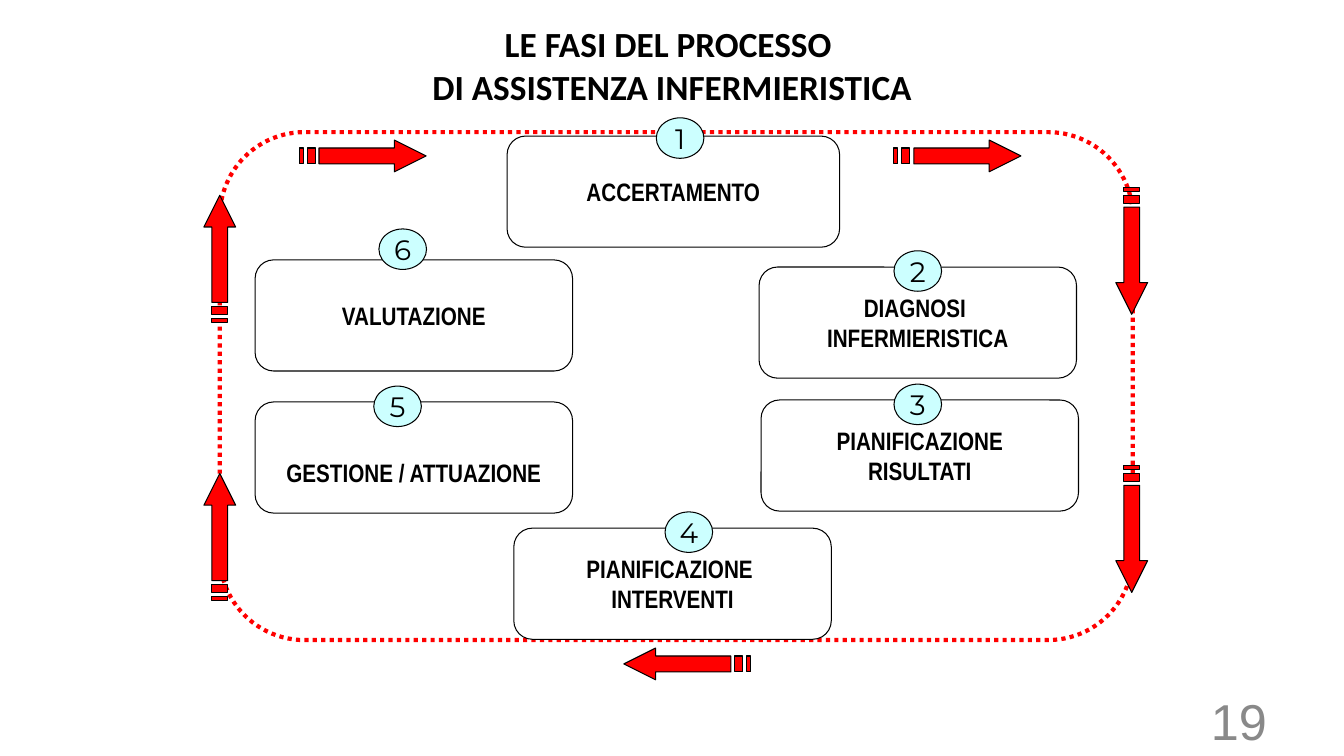
"""Build the slide on the six phases of the nursing care process."""
from pptx import Presentation
from pptx.dml.color import RGBColor
from pptx.enum.dml import MSO_LINE_DASH_STYLE as Dash
from pptx.enum.shapes import MSO_SHAPE as Preset
from pptx.enum.text import MSO_VERTICAL_ANCHOR as Anchor, PP_PARAGRAPH_ALIGNMENT as Align
from pptx.util import Cm, Pt


def paint(shape, fill, line, width):
    shape.shadow.inherit = False
    if fill:
        shape.fill.solid()
        shape.fill.fore_color.rgb = RGBColor.from_string(fill)
    else:
        shape.fill.background()
    shape.line.color.rgb = RGBColor.from_string(line)
    shape.line.width = Pt(width)


def write(para, text, font, size, color="000000", bold=False, align=Align.CENTER):
    para.alignment = align
    span = para.add_run()
    span.text = text
    span.font.name = font
    span.font.size = Pt(size)
    span.font.bold = bold
    span.font.color.rgb = RGBColor.from_string(color)


deck = Presentation()
deck.slide_width, deck.slide_height = Cm(33.87), Cm(19.05)
page = deck.slides.add_slide(deck.slide_layouts[5])
shapes = page.shapes

title = shapes.title
title.left, title.top, title.width, title.height = Cm(5.51), Cm(0.76), Cm(22.86), Cm(1.75)
title.text_frame.vertical_anchor = Anchor.MIDDLE
heading = title.text_frame.paragraphs[0]
write(heading, "LE FASI DEL PROCESSO ", "Calibri", 25.2, bold=True)
heading.add_line_break()
write(heading, "DI ASSISTENZA INFERMIERISTICA", "Calibri", 25.2, bold=True)

number_box = shapes.add_textbox(Cm(24.28), Cm(17.65), Cm(7.9), Cm(1.02))
number_box.text_frame.word_wrap = True
number_box.text_frame.vertical_anchor = Anchor.MIDDLE
write(number_box.text_frame.paragraphs[0], "19", "Arial", 36, "898989", align=Align.RIGHT)

cycle = shapes.add_shape(Preset.ROUNDED_RECTANGLE, Cm(5.54), Cm(3.33), Cm(23.01), Cm(12.8))
paint(cycle, None, "FF0000", 3)
cycle.line.dash_style = Dash.ROUND_DOT

ARROWS = [
    (22.53, 3.53, 0), (26.92, 5.92, 90), (26.92, 12.93, 90), (15.72, 16.33, 180),
    (3.94, 6.12, 270), (3.94, 13.13, 270), (7.54, 3.53, 0),
]
HEAD = [(24, 2), (5, 2), (5, 6), (24, 6), (24, 8), (32, 4)]
STRIPES = [(2, 4), (0, 1)]
for left, top, angle in ARROWS:
    outline = shapes.build_freeform(24, 0, scale=Cm(0.1))
    outline.add_line_segments(HEAD)
    for start, end in STRIPES:
        outline.move_to(start, 2)
        outline.add_line_segments([(start, 6), (end, 6), (end, 2)])
    arrow = outline.convert_to_shape(Cm(left), Cm(top))
    arrow.rotation = angle
    paint(arrow, "FF0000", "000000", 0.75)

PHASES = [
    ("3", ["PIANIFICAZIONE", "RISULTATI"], 19.18, 10.08, 8, 22.53, 9.68),
    ("2", ["DIAGNOSI ", "INFERMIERISTICA"], 19.13, 6.73, 8, 22.53, 6.32),
    ("4", ["PIANIFICAZIONE ", "INTERVENTI"], 12.95, 13.31, 8, 16.76, 12.9),
    ("5", ["GESTIONE / ATTUAZIONE"], 6.43, 10.13, 8, 9.42, 9.73),
    ("6", ["VALUTAZIONE"], 6.43, 6.55, 8, 9.55, 5.77),
    ("1", ["ACCERTAMENTO"], 12.78, 3.43, 8.38, 16.54, 2.97),
]
for number, lines, left, top, width, badge_left, badge_top in PHASES:
    box = shapes.add_shape(Preset.ROUNDED_RECTANGLE, Cm(left), Cm(top), Cm(width), Cm(2.8))
    paint(box, None if number == "1" else "FFFFFF", "000000", 0.75)
    badge = shapes.add_shape(Preset.OVAL, Cm(badge_left), Cm(badge_top), Cm(1.2), Cm(1.02))
    paint(badge, "CCFFFF", "000000", 0.75)
    for shape in (box, badge):
        shape.text_frame.word_wrap = False
        shape.text_frame.vertical_anchor = Anchor.MIDDLE
    if number == "5":
        box.text_frame.margin_top = Cm(0.9)
    for index, line in enumerate(lines):
        para = box.text_frame.add_paragraph() if index else box.text_frame.paragraphs[0]
        write(para, line, "Arial Narrow", 18, bold=True)
    write(badge.text_frame.paragraphs[0], number, "Montserrat", 20)

deck.save("out.pptx")
